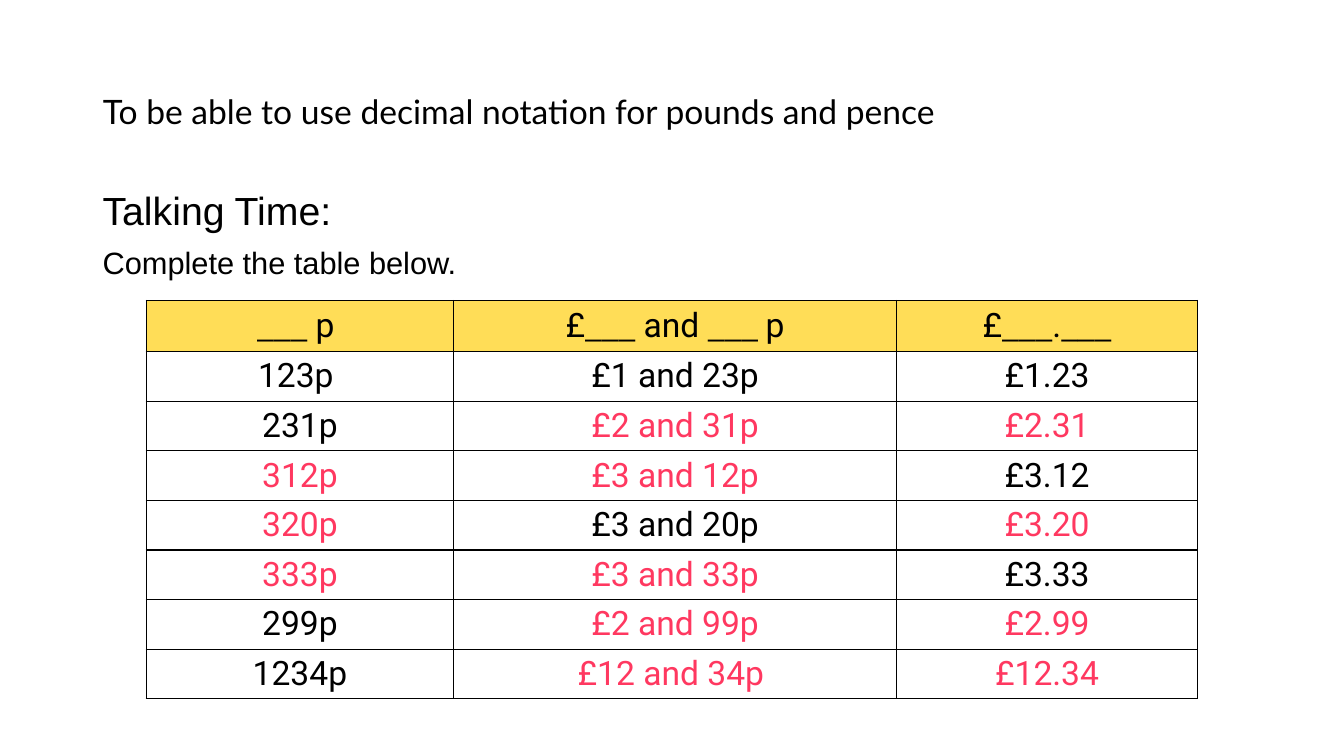
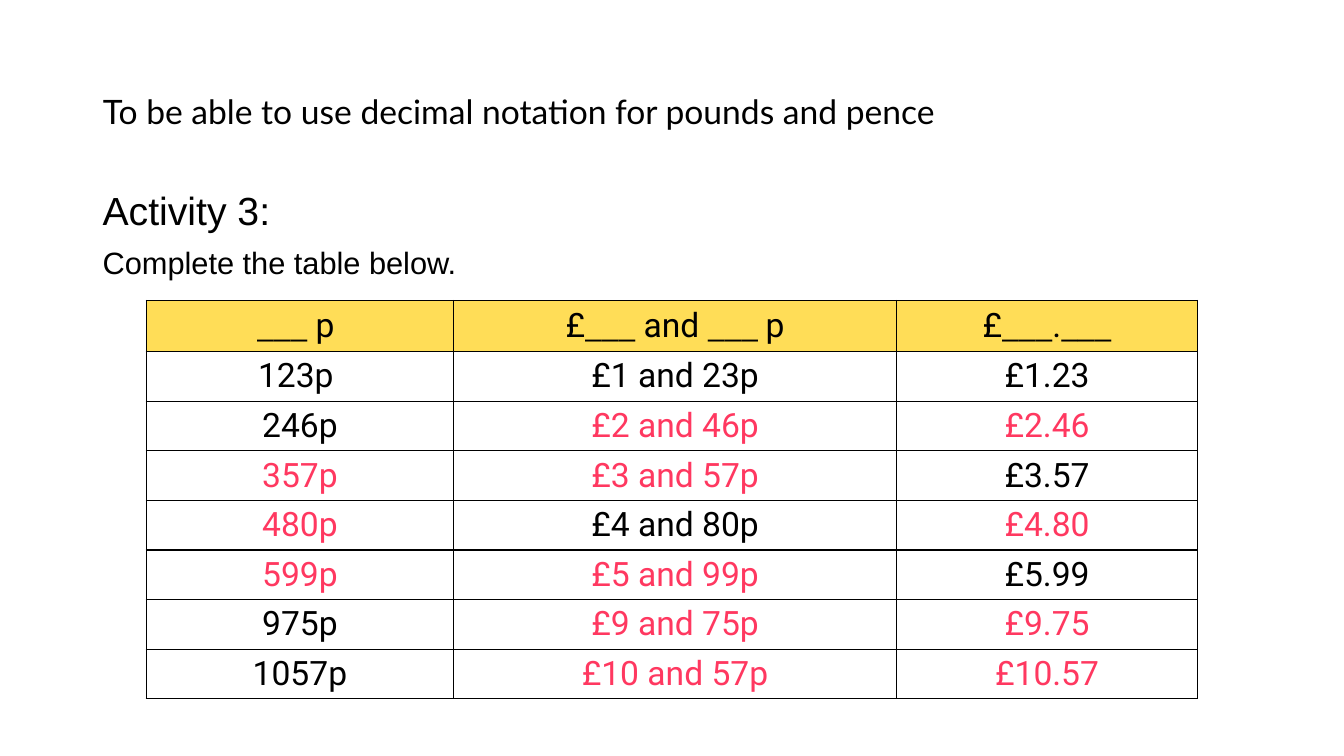
import lxml.etree
import pptx
import pptx.dml.color
import pptx.enum.text
import pptx.oxml.ns
import pptx.util

OBJECTIVE = "To be able to use decimal notation for pounds and pence"
INSTRUCTION = "Complete the table below."
BLANK = "___"
HEADER = (
    (BLANK, " p "),
    (" £", BLANK, " and ", BLANK + " ", "p "),
    ("£", BLANK, ".", BLANK),
)
GIVEN_COLUMNS = ({0, 1, 2}, {0}, {2}, {1}, {2}, {0}, {0})
ACTIVITIES = (
    ("Talking Time:", (
        ("123p ", "£1 and 23p", "£1.23"),
        ("231p", "£2 and 31p", "£2.31"),
        ("312p", "£3 and 12p", "£3.12"),
        ("320p", "£3 and 20p", "£3.20"),
        ("333p", "£3 and 33p", "£3.33"),
        ("299p", "£2 and 99p", "£2.99"),
        ("1234p", "£12 and 34p ", "£12.34"),
    )),
    ("Activity 3:", (
        ("123p ", "£1 and 23p", "£1.23"),
        ("246p", "£2 and 46p", "£2.46"),
        ("357p", "£3 and 57p", "£3.57"),
        ("480p", "£4 and 80p", "£4.80"),
        ("599p", "£5 and 99p", "£5.99"),
        ("975p", "£9 and 75p", "£9.75"),
        ("1057p", "£10 and 57p", "£10.57"),
    )),
)

BLACK, WHITE, YELLOW, ANSWER = "000000", "FFFFFF", "FFDD57", "FF3860"
SLIDE_SIZE = (13.33, 7.5)
TITLE_BOX = (0.92, 0.4, 9.6, 1.45)
BODY_BOX = (0.92, 1.85, 12.03, 4.76)
TABLE_ORIGIN = (1.45, 2.98)
COLUMN_WIDTHS = (3.05, 4.39, 2.99)
ROW_HEIGHT = 0.49
BORDER_SIDES = ("a:lnL", "a:lnR", "a:lnT", "a:lnB")

MIDDLE = pptx.enum.text.MSO_ANCHOR.MIDDLE
TOP = pptx.enum.text.MSO_ANCHOR.TOP
CENTER = pptx.enum.text.PP_ALIGN.CENTER
LEFT = pptx.enum.text.PP_ALIGN.LEFT


def color(value):
    return pptx.dml.color.RGBColor.from_string(value)


def inches(values):
    return [pptx.util.Inches(value) for value in values]


def apply_format(target, formats):
    for name, value in formats.items():
        setattr(target, name, value)


def add_run(paragraph, text, font_name, size, text_color=BLACK):
    run = paragraph.add_run()
    run.text = text
    apply_format(run.font, {"name": font_name, "size": pptx.util.Pt(size), "bold": False})
    run.font.color.rgb = color(text_color)


def prepare_frame(frame, anchor):
    apply_format(frame, {
        "word_wrap": True,
        "auto_size": pptx.enum.text.MSO_AUTO_SIZE.NONE,
        "vertical_anchor": anchor,
    })


def add_title(slide):
    title = slide.shapes.title
    apply_format(title, dict(zip(("left", "top", "width", "height"), inches(TITLE_BOX))))
    prepare_frame(title.text_frame, MIDDLE)
    paragraph = title.text_frame.paragraphs[0]
    apply_format(paragraph, {"alignment": LEFT, "line_spacing": 0.9})
    add_run(paragraph, OBJECTIVE, "Lato", 24)


def add_body(slide, heading):
    frame = slide.shapes.add_textbox(*inches(BODY_BOX)).text_frame
    prepare_frame(frame, TOP)
    for index, (text, size) in enumerate(((heading, 28), (INSTRUCTION, 22))):
        paragraph = frame.add_paragraph() if index else frame.paragraphs[0]
        apply_format(paragraph, {
            "line_spacing": 0.9,
            "space_before": pptx.util.Pt(10 if index else 0),
        })
        add_run(paragraph, text, "Arial", size)


def add_borders(cell):
    properties = cell._tc.get_or_add_tcPr()
    qn = pptx.oxml.ns.qn
    for position, side in enumerate(BORDER_SIDES):
        line = lxml.etree.Element(qn(side), w=str(pptx.util.Pt(1)))
        fill = lxml.etree.SubElement(line, qn("a:solidFill"))
        lxml.etree.SubElement(fill, qn("a:srgbClr"), val=BLACK)
        properties.insert(position, line)


def fill_cell(cell, parts, fill_color, text_color):
    cell.vertical_anchor = MIDDLE
    cell.fill.solid()
    cell.fill.fore_color.rgb = color(fill_color)
    add_borders(cell)
    paragraph = cell.text_frame.paragraphs[0]
    paragraph.alignment = CENTER
    for part in parts:
        font_name = "Calibri" if BLANK in part else "Roboto"
        add_run(paragraph, part, font_name, 24, text_color)


def add_money_table(slide, rows):
    row_count = len(rows) + 1
    size = (sum(COLUMN_WIDTHS), row_count * ROW_HEIGHT)
    frame = slide.shapes.add_table(
        row_count, len(COLUMN_WIDTHS), *inches(TABLE_ORIGIN + size))
    table = frame.table
    for column, width in zip(table.columns, inches(COLUMN_WIDTHS)):
        column.width = width
    for column, parts in enumerate(HEADER):
        fill_cell(table.cell(0, column), parts, YELLOW, BLACK)
    for row, (values, given) in enumerate(zip(rows, GIVEN_COLUMNS), start=1):
        for column, value in enumerate(values):
            text_color = BLACK if column in given else ANSWER
            fill_cell(table.cell(row, column), (value,), WHITE, text_color)


def main():
    presentation = pptx.Presentation()
    presentation.slide_width, presentation.slide_height = inches(SLIDE_SIZE)
    title_only = presentation.slide_layouts[5]
    for heading, rows in ACTIVITIES:
        slide = presentation.slides.add_slide(title_only)
        add_title(slide)
        add_body(slide, heading)
        add_money_table(slide, rows)
    presentation.save("out.pptx")


if __name__ == "__main__":
    main()
